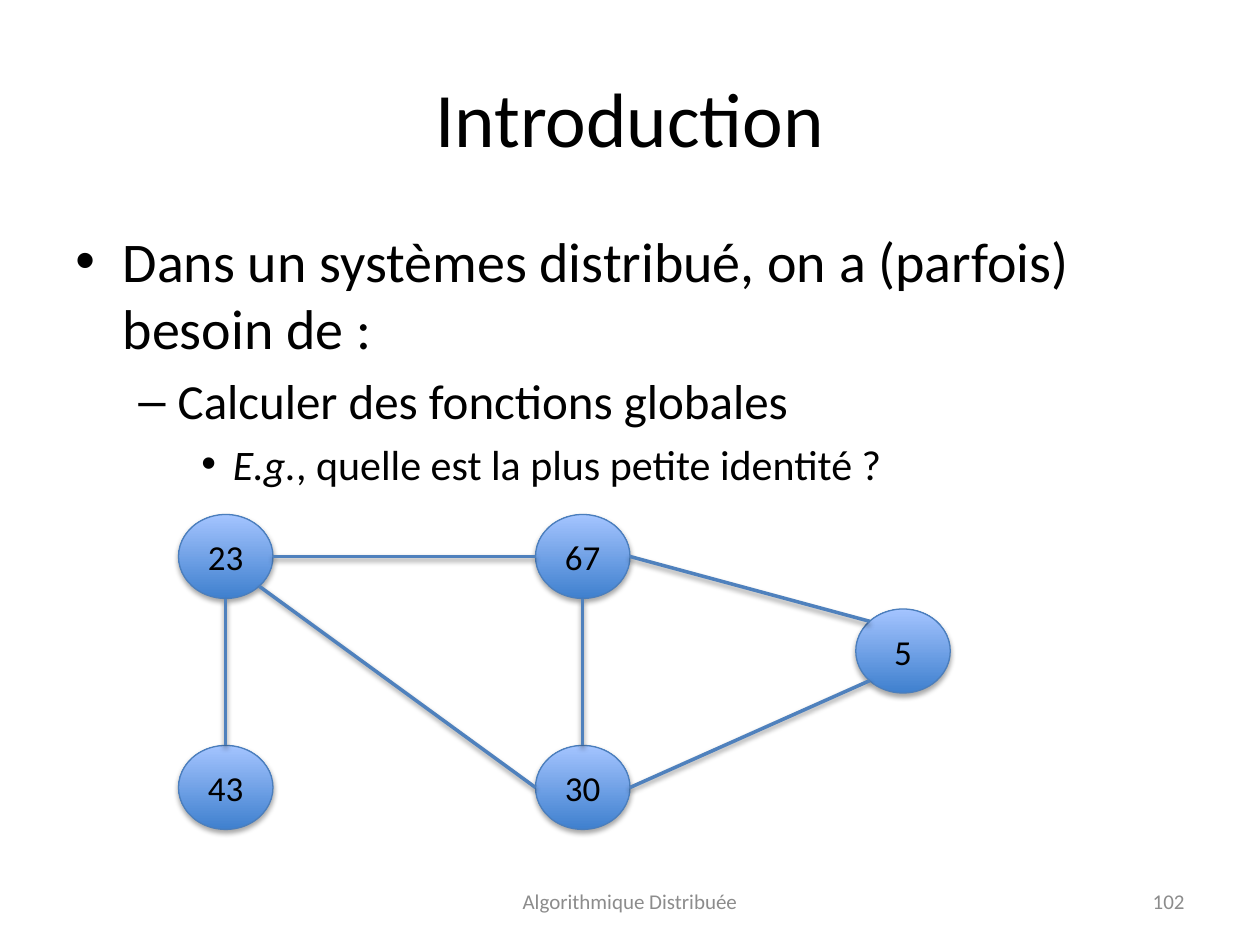
from math import sqrt

from lxml import etree
from pptx import Presentation
from pptx.dml.color import RGBColor
from pptx.enum.shapes import MSO_CONNECTOR, MSO_SHAPE
from pptx.enum.text import MSO_ANCHOR, PP_ALIGN
from pptx.oxml.ns import qn
from pptx.util import Pt

LEFT, CENTER, RIGHT = PP_ALIGN.LEFT, PP_ALIGN.CENTER, PP_ALIGN.RIGHT
TOP, MIDDLE = MSO_ANCHOR.TOP, MSO_ANCHOR.MIDDLE
OVAL, STRAIGHT = MSO_SHAPE.OVAL, MSO_CONNECTOR.STRAIGHT

FONT = "Calibri"
COLORS = {
    "text": "000000",
    "footer": "8C8C8C",
    "node_dark": "3F80CE",
    "node_light": "A4C4FF",
    "node_line": "4B7EBC",
    "edge": "4F81BD",
    "shadow": "000000",
}
NODE_W, NODE_H = 54, 48
DIAGONAL = 1 / sqrt(2)
SITES = {
    "top": (0, -1),
    "bottom": (0, 1),
    "left": (-1, 0),
    "right": (1, 0),
    "top_left": (-DIAGONAL, -DIAGONAL),
    "bottom_left": (-DIAGONAL, DIAGONAL),
    "bottom_right": (DIAGONAL, DIAGONAL),
}
NODES = {
    "23": (129, 318),
    "43": (129, 450),
    "30": (333, 450),
    "67": (333, 318),
    "5": (516, 372),
}
EDGES = [
    ("23", "right", "67", "left"),
    ("23", "bottom", "43", "top"),
    ("23", "bottom_right", "30", "left"),
    ("67", "bottom", "30", "top"),
    ("67", "right", "5", "top_left"),
    ("30", "right", "5", "bottom_left"),
]
BULLETS = [
    ("•", 27, 27, 32, [("Dans un systèmes distribué, on a (parfois) besoin de :", False)]),
    ("–", 58.5, 22.5, 28, [("Calculer des fonctions globales", False)]),
    ("•", 90, 18, 24, [("E.g.", True), (", quelle est la plus petite identité ?", False)]),
]


def rgb(name):
    """Return the named colour."""
    return RGBColor.from_string(COLORS[name])


def add_run(p, text, size, color="text", italic=False):
    """Add one formatted run to a paragraph."""
    r = p.add_run()
    r.text = text
    r.font.name = FONT
    r.font.size = Pt(size)
    r.font.italic = italic
    r.font.color.rgb = rgb(color)


def add_box(s, box, anchor=MIDDLE):
    """Add a wrapping text box and return its text frame."""
    tf = s.shapes.add_textbox(*map(Pt, box)).text_frame
    tf.word_wrap = True
    tf.vertical_anchor = anchor
    return tf


def add_label(s, box, text, size, align, color="text"):
    """Add a text box holding a single line."""
    p = add_box(s, box).paragraphs[0]
    p.alignment = align
    add_run(p, text, size, color)


def add_bullets(s, box):
    """Add the bulleted list with its three levels."""
    tf = add_box(s, box, TOP)
    for level, (char, margin, hang, size, runs) in enumerate(BULLETS):
        p = tf.add_paragraph() if level else tf.paragraphs[0]
        p.level = level
        p.alignment = LEFT
        p.space_before = Pt(size * 0.2)
        pPr = p._p.get_or_add_pPr()
        pPr.set("marL", str(Pt(margin)))
        pPr.set("indent", str(-Pt(hang)))
        etree.SubElement(pPr, qn("a:buFont")).set("typeface", "Arial")
        etree.SubElement(pPr, qn("a:buChar")).set("char", char)
        for text, italic in runs:
            add_run(p, text, size, italic=italic)


def add_shadow(sp, distance, opacity):
    """Give a shape or connector a soft shadow below it."""
    effects = etree.SubElement(sp._element.spPr, qn("a:effectLst"))
    shadow = etree.SubElement(
        effects, qn("a:outerShdw"), blurRad=str(Pt(3.1)), dist=str(Pt(distance)),
        dir="5400000", rotWithShape="0")
    color = etree.SubElement(shadow, qn("a:srgbClr"), val=COLORS["shadow"])
    etree.SubElement(color, qn("a:alpha"), val=str(opacity * 1000))


def add_node(s, name):
    """Add one numbered node of the network."""
    x, y = NODES[name]
    box = (x - NODE_W / 2, y - NODE_H / 2, NODE_W, NODE_H)
    sp = s.shapes.add_shape(OVAL, *map(Pt, box))
    sp.fill.gradient()
    sp.fill.gradient_angle = 90
    for stop, color in zip(sp.fill.gradient_stops, ("node_dark", "node_light")):
        stop.color.rgb = rgb(color)
    sp.line.color.rgb = rgb("node_line")
    sp.line.width = Pt(0.75)
    add_shadow(sp, 1.8, 35)
    tf = sp.text_frame
    tf.vertical_anchor = MIDDLE
    p = tf.paragraphs[0]
    p.alignment = CENTER
    add_run(p, name, 20)


def site_point(name, site):
    """Return the point where an edge meets a node."""
    (x, y), (dx, dy) = NODES[name], SITES[site]
    return Pt(x + dx * NODE_W / 2), Pt(y + dy * NODE_H / 2)


def add_edge(s, start, start_site, end, end_site):
    """Add a line between two nodes."""
    line = s.shapes.add_connector(
        STRAIGHT, *site_point(start, start_site), *site_point(end, end_site))
    line.line.color.rgb = rgb("edge")
    line.line.width = Pt(2)
    add_shadow(line, 1.6, 38)


def main():
    """Build the slide and save it."""
    prs = Presentation()
    prs.slide_width, prs.slide_height = Pt(720), Pt(540)
    s = prs.slides.add_slide(prs.slide_layouts[6])
    add_label(s, (36, 21.6, 648, 90), "Introduction", 44, CENTER)
    add_bullets(s, (36, 126, 648, 168))
    add_label(s, (246, 500.5, 228, 28.75), "Algorithmique Distribuée", 12, CENTER, "footer")
    add_label(s, (516, 500.5, 168, 28.75), "102", 12, RIGHT, "footer")
    for name in NODES:
        add_node(s, name)
    for edge in EDGES:
        add_edge(s, *edge)
    prs.save("out.pptx")


if __name__ == "__main__":
    main()
